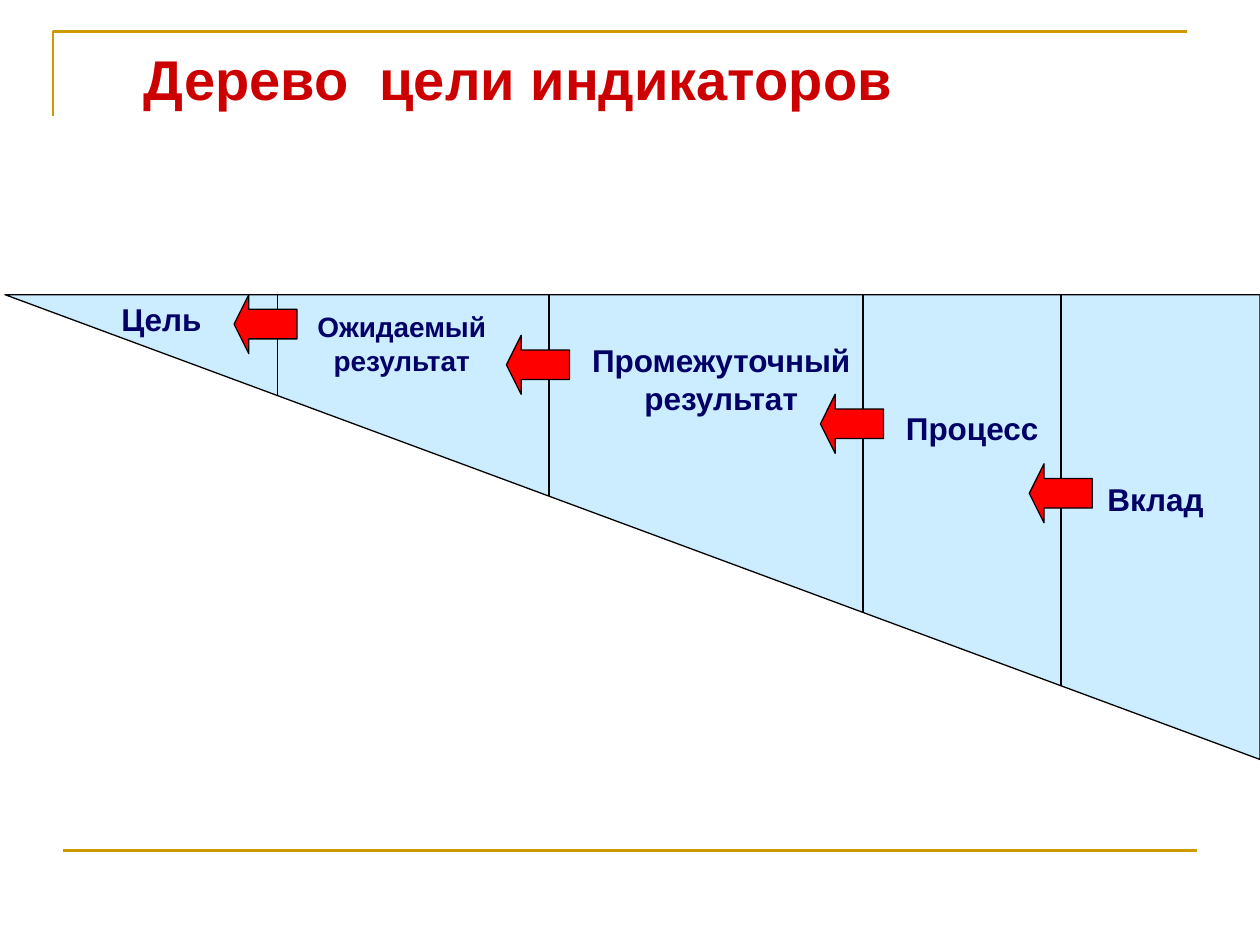
"""Build a slide that splits a widening wedge into five stages linked by arrows."""
from dataclasses import dataclass

from lxml.etree import SubElement
from pptx import Presentation
from pptx.dml.color import RGBColor
from pptx.enum.shapes import MSO_CONNECTOR as Connector, MSO_SHAPE as Preset
from pptx.enum.text import MSO_ANCHOR as Anchor, MSO_AUTO_SIZE as AutoSize, PP_ALIGN as Align
from pptx.oxml.ns import qn
from pptx.shapes.autoshape import Shape
from pptx.slide import Slide
from pptx.text.text import TextFrame
from pptx.util import Cm, Pt

GOLD = RGBColor(0xCC, 0x99, 0x00)
CRIMSON = RGBColor(0xCC, 0x00, 0x00)
PALE_BLUE = RGBColor(0xCC, 0xEC, 0xFF)
NAVY = RGBColor(0x00, 0x00, 0x66)
RED = RGBColor(0xFF, 0x00, 0x00)
BLACK = RGBColor(0x00, 0x00, 0x00)

WEDGE_LEFT, WEDGE_TOP, WEDGE_WIDTH, WEDGE_HEIGHT = 0.1, 5.94, 25.3, 9.37
ARROW_WIDTH, ARROW_HEIGHT = 1.27, 1.19


@dataclass(frozen=True)
class Label:
    text: str
    left: float
    top: float
    width: float
    height: float = 1.02
    size: int = 18


@dataclass(frozen=True)
class Divider:
    x: float
    arrow_left: float
    arrow_top: float


LABELS = [
    Label("Вклад", 21.82, 9.55, 2.95),
    Label("Процесс", 17.81, 8.13, 3.58),
    Label("Промежуточный результат", 11.48, 6.76, 6.12, 1.78),
    Label("Ожидаемый результат", 5.99, 6.12, 4.22, 1.63, 16),
    Label("Цель", 1.78, 5.92, 2.95),
]
DIVIDERS = [
    Divider(5.59, 4.72, 5.94),
    Divider(11.07, 10.21, 6.76),
    Divider(17.4, 16.54, 7.95),
    Divider(21.39, 20.75, 9.35),
]


def write(frame: TextFrame, text: str, size: int, color: RGBColor, align: Align) -> None:
    """Fill a text frame with one bold Arial paragraph."""
    frame.text = text
    frame.word_wrap = True
    frame.vertical_anchor = Anchor.TOP
    paragraph = frame.paragraphs[0]
    paragraph.alignment = align
    font = paragraph.runs[0].font
    font.name, font.size, font.bold = "Arial", Pt(size), True
    font.color.rgb = color


def add_title(slide: Slide, text: str) -> None:
    """Place and format the title placeholder."""
    title = slide.shapes.title
    title.left, title.top, title.width, title.height = Cm(2.64), Cm(0.76), Cm(22.86), Cm(3.18)
    write(title.text_frame, text, 32, CRIMSON, Align.LEFT)
    title.text_frame.auto_size = AutoSize.NONE


def add_line(slide: Slide, start: tuple[float, float], end: tuple[float, float],
             color: RGBColor, weight: float) -> None:
    """Draw a straight line without a shadow."""
    line = slide.shapes.add_connector(Connector.STRAIGHT, *map(Cm, start + end))
    line.line.color.rgb = color
    line.line.width = Pt(weight)
    SubElement(line.element.spPr, qn("a:effectLst"))


def add_frame(slide: Slide) -> None:
    """Draw the gold corner and the gold rule at the foot."""
    builder = slide.shapes.build_freeform(Cm(1.07), Cm(2.34))
    builder.add_line_segments([(Cm(1.07), Cm(0.64)), (Cm(23.93), Cm(0.64))], close=False)
    corner = builder.convert_to_shape()
    corner.shadow.inherit = False
    corner.fill.background()
    corner.line.color.rgb = GOLD
    corner.line.width = Pt(1.5)
    add_line(slide, (1.27, 17.15), (24.13, 17.15), GOLD, 1.5)


def add_preset(slide: Slide, preset: Preset, left: float, top: float, width: float,
               height: float, fill: RGBColor) -> Shape:
    """Draw a filled preset shape with a thin black outline."""
    shape = slide.shapes.add_shape(preset, Cm(left), Cm(top), Cm(width), Cm(height))
    shape.shadow.inherit = False
    shape.fill.solid()
    shape.fill.fore_color.rgb = fill
    shape.line.color.rgb = BLACK
    shape.line.width = Pt(0.75)
    return shape


def add_label(slide: Slide, label: Label) -> None:
    """Write the name of a stage."""
    box = slide.shapes.add_textbox(Cm(label.left), Cm(label.top), Cm(label.width), Cm(label.height))
    write(box.text_frame, label.text, label.size, NAVY, Align.CENTER)
    box.text_frame.auto_size = AutoSize.SHAPE_TO_FIT_TEXT


def add_divider(slide: Slide, divider: Divider) -> None:
    """Draw a divider from the top of the wedge down to its sloping side."""
    depth = WEDGE_HEIGHT * (divider.x - WEDGE_LEFT) / WEDGE_WIDTH
    add_line(slide, (divider.x, WEDGE_TOP), (divider.x, WEDGE_TOP + depth), BLACK, 0.75)


def add_arrow(slide: Slide, divider: Divider) -> None:
    """Draw the arrow that crosses a divider."""
    arrow = add_preset(slide, Preset.LEFT_ARROW, divider.arrow_left, divider.arrow_top,
                       ARROW_WIDTH, ARROW_HEIGHT, RED)
    arrow.adjustments[0], arrow.adjustments[1] = 0.5, 0.25


def main() -> None:
    """Build and save the presentation."""
    presentation = Presentation()
    presentation.slide_width, presentation.slide_height = Cm(25.4), Cm(19.05)
    slide = presentation.slides.add_slide(presentation.slide_layouts[5])
    add_frame(slide)
    add_title(slide, "Дерево  цели индикаторов")
    wedge = add_preset(slide, Preset.RIGHT_TRIANGLE, WEDGE_LEFT, WEDGE_TOP,
                       WEDGE_WIDTH, WEDGE_HEIGHT, PALE_BLUE)
    wedge.rotation = 180
    for label in LABELS:
        add_label(slide, label)
    for divider in DIVIDERS:
        add_divider(slide, divider)
    for divider in DIVIDERS:
        add_arrow(slide, divider)
    presentation.save("out.pptx")


if __name__ == "__main__":
    main()
